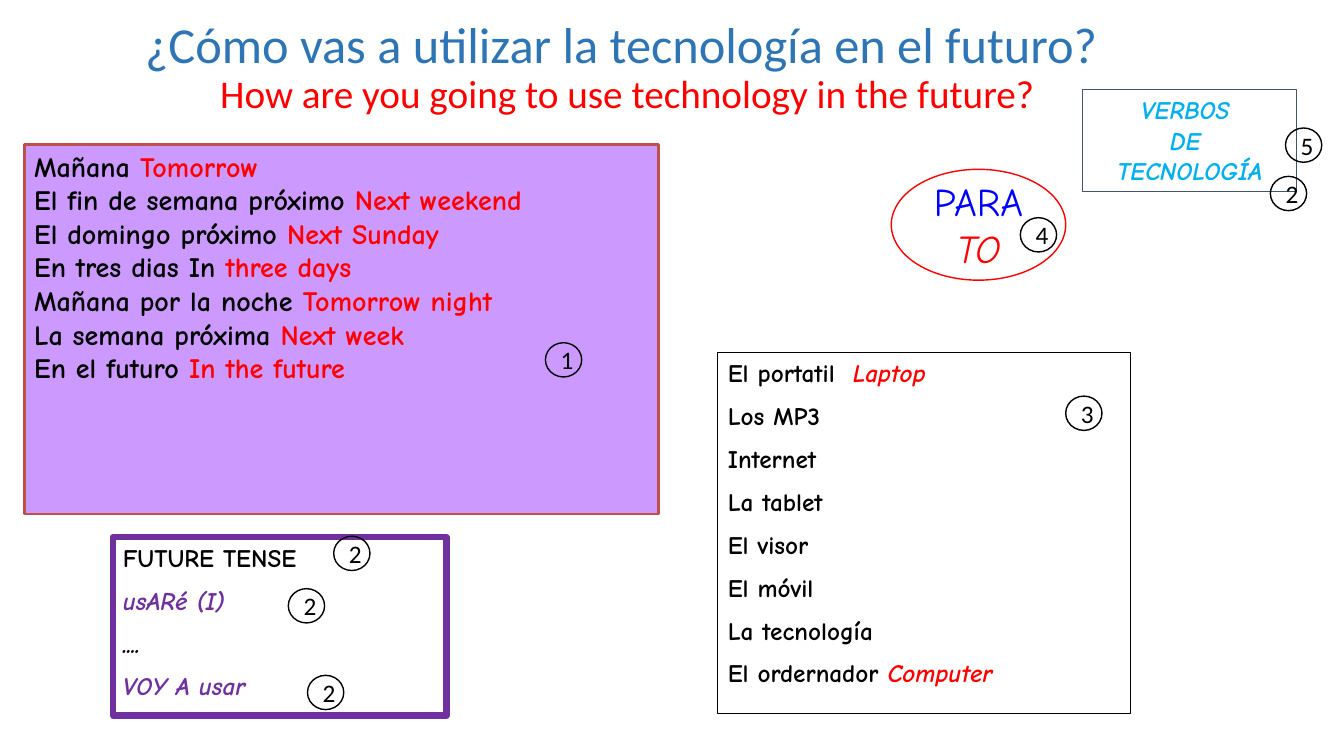
import pptx
import pptx.util
import pptx.dml.color
import pptx.enum.shapes
import pptx.enum.text

Inches = pptx.util.Inches
Pt = pptx.util.Pt
SHAPE = pptx.enum.shapes.MSO_SHAPE
ALIGN = pptx.enum.text.PP_ALIGN
ANCHOR = pptx.enum.text.MSO_ANCHOR

COLORS = {
    "black": "000000",
    "white": "FFFFFF",
    "red": "FF0000",
    "blue": "0000FF",
    "title": "2E75B6",
    "lilac": "CC99FF",
    "brick": "C0504D",
    "purple": "7030A0",
    "slate": "44546A",
    "sky": "00B0F0",
}

TIME_PHRASES = [
    ("Mañana ", "Tomorrow"),
    ("El fin de semana próximo ", "Next weekend"),
    ("El domingo próximo ", "Next Sunday"),
    ("En tres dias In ", "three days"),
    ("Mañana por la noche ", "Tomorrow night"),
    ("La semana próxima ", "Next week"),
    ("En el futuro ", "In the future"),
]
DEVICES = [
    ("El portatil\u00a0 ", "Laptop"),
    ("Los MP3", ""),
    ("Internet", ""),
    ("La tablet", ""),
    ("El visor", ""),
    ("El móvil", ""),
    ("La tecnología", ""),
    ("El ordernador ", "Computer"),
]
BADGES = [
    ("5", 12.75, 1.27),
    ("1", 5.41, 3.4),
    ("2", 3.31, 5.32),
    ("3", 10.57, 3.93),
    ("4", 10.12, 2.16),
    ("2", 2.86, 5.84),
    ("2", 3.05, 6.7),
    ("2", 12.6, 1.75),
]


def rgb(name):
    return pptx.dml.color.RGBColor.from_string(COLORS[name])


def bilingual(pairs, italic=False):
    """Turn Spanish-English pairs into lines of (text, colour, italic) runs."""
    return [
        [(spanish, "black", False)] + ([(english, "red", italic)] if english else [])
        for spanish, english in pairs
    ]


def write_lines(tf, lines, size, font="Comic Neue", bold=False,
                align=ALIGN.LEFT, before=0):
    """Write one paragraph per line; a line is a list of (text, colour, italic)."""
    for i, line in enumerate(lines):
        p = tf.add_paragraph() if i else tf.paragraphs[0]
        p.alignment = align
        p.space_before = Pt(before)
        p.font.name = font
        p.font.size = Pt(size)
        p.font.bold = bold
        for text, color, italic in line:
            r = p.add_run()
            r.text = text
            r.font.color.rgb = rgb(color)
            r.font.italic = italic


def add_outlined(s, kind, box, line, width, fill=None, anchor=ANCHOR.TOP):
    """Add an outlined shape and return its text frame."""
    sp = s.shapes.add_shape(kind, *map(Inches, box))
    sp.shadow.inherit = False
    if fill:
        sp.fill.solid()
        sp.fill.fore_color.rgb = rgb(fill)
    else:
        sp.fill.background()
    sp.line.color.rgb = rgb(line)
    sp.line.width = Pt(width)
    tf = sp.text_frame
    tf.word_wrap = True
    tf.vertical_anchor = anchor
    return tf


def add_title(s):
    tf = s.shapes.add_textbox(*map(Inches, (0.27, 0.26, 11.9, 0.95))).text_frame
    tf.word_wrap = True
    tf.vertical_anchor = ANCHOR.BOTTOM
    lines = [
        ("¿Cómo vas a utilizar la tecnología en el futuro? ", 36, "title"),
        ("How are you going to use technology in the future?", 28, "red"),
    ]
    for i, (text, size, color) in enumerate(lines):
        p = tf.add_paragraph() if i else tf.paragraphs[0]
        p.text = text
        p.alignment = ALIGN.CENTER
        p.line_spacing = 0.9
        p.font.name = "Calibri"
        p.font.size = Pt(size)
        p.font.color.rgb = rgb(color)


def add_badge(s, number, left, top):
    tf = add_outlined(s, SHAPE.OVAL, (left, top, 0.36, 0.34), "black", 1,
                      anchor=ANCHOR.MIDDLE)
    write_lines(tf, [[(number, "black", False)]], 18, "Calibri", align=ALIGN.CENTER)


def main():
    prs = pptx.Presentation()
    prs.slide_width = Inches(13.33)
    prs.slide_height = Inches(7.5)
    s = prs.slides.add_slide(prs.slide_layouts[6])

    tf = add_outlined(s, SHAPE.RECTANGLE, (0.24, 1.43, 6.29, 3.67), "brick", 2, "lilac")
    write_lines(tf, bilingual(TIME_PHRASES), 20, bold=True)

    add_title(s)

    tf = add_outlined(s, SHAPE.RECTANGLE, (7.12, 3.5, 4.09, 3.58), "black", 0.75)
    write_lines(tf, bilingual(DEVICES, italic=True), 18, bold=True, before=9)

    tf = add_outlined(s, SHAPE.RECTANGLE, (1.12, 5.33, 3.31, 1.77), "purple", 4.5)
    tenses = [
        [("FUTURE TENSE", "black", False)],
        [("usARé (I)", "purple", True)],
        [("....", "black", True)],
        [("VOY A usar", "purple", True)],
    ]
    write_lines(tf, tenses, 18, bold=True, before=9)

    tf = add_outlined(s, SHAPE.OVAL, (8.84, 1.68, 1.73, 1.1), "red", 1, "white",
                      ANCHOR.MIDDLE)
    write_lines(tf, [[("PARA", "blue", False)], [("TO", "red", True)]], 28,
                align=ALIGN.CENTER)

    tf = add_outlined(s, SHAPE.RECTANGLE, (10.74, 0.89, 2.12, 1.01), "slate", 0.75)
    verbs = [[(word, "sky", True)] for word in ("VERBOS ", "DE ", "TECNOLOGÍA")]
    write_lines(tf, verbs, 18, bold=True, align=ALIGN.CENTER)

    for number, left, top in BADGES:
        add_badge(s, number, left, top)

    prs.save("out.pptx")


if __name__ == "__main__":
    main()
